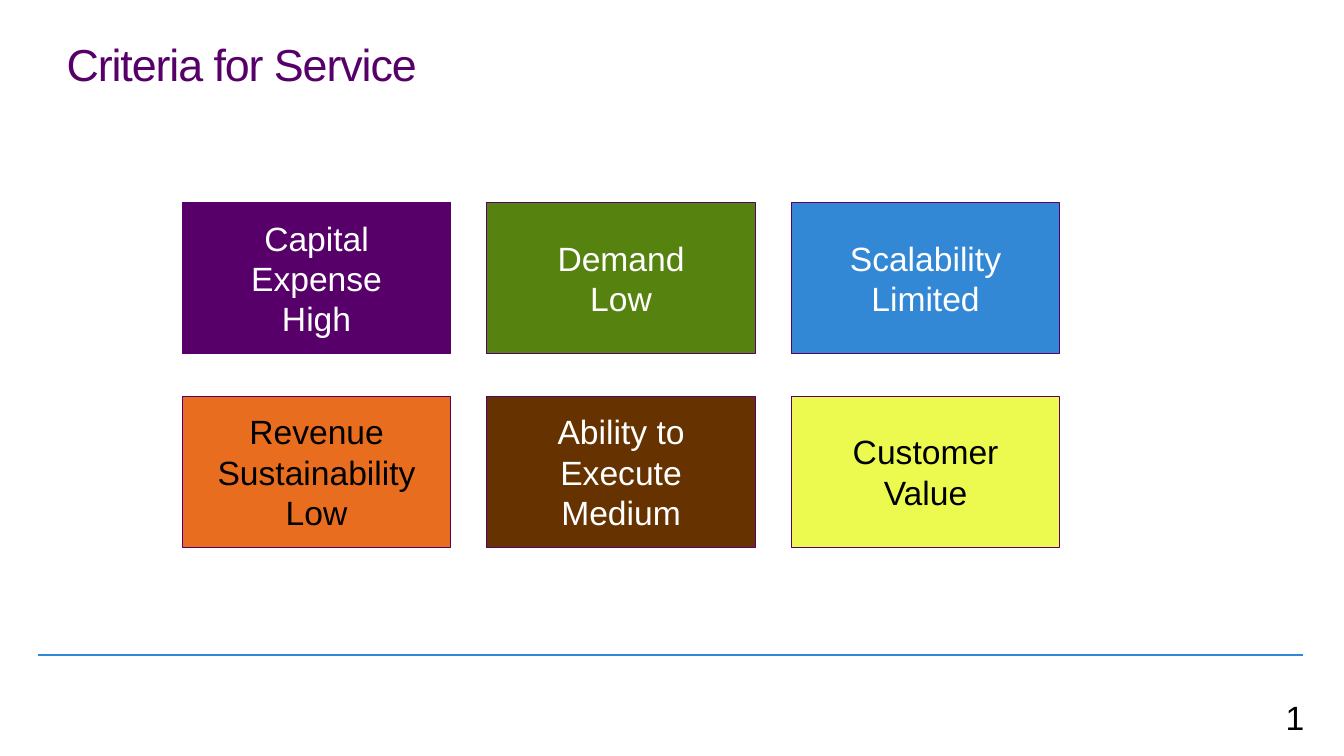
from dataclasses import dataclass

from pptx import Presentation
from pptx.dml.color import RGBColor
from pptx.enum.shapes import MSO_CONNECTOR, MSO_SHAPE
from pptx.enum.text import MSO_ANCHOR, PP_ALIGN
from pptx.oxml.ns import qn
from pptx.oxml.xmlchemy import OxmlElement
from pptx.util import Inches, Pt

COLORS = {
    "purple": "580069",
    "green": "56830F",
    "blue": "3388D5",
    "orange": "E86D1F",
    "brown": "663300",
    "yellow": "ECFA50",
    "white": "FFFFFF",
    "black": "000000",
}
BOX_FRAME = {
    "margin_left": Inches(0.2),
    "margin_right": Inches(0.2),
    "margin_top": Inches(0.16),
    "margin_bottom": Inches(0.16),
    "word_wrap": True,
}
TITLE_FRAME = {
    "margin_left": Inches(0.1),
    "margin_right": Inches(0.1),
    "margin_top": Inches(0.05),
    "margin_bottom": Inches(0.05),
    "word_wrap": True,
    "vertical_anchor": MSO_ANCHOR.TOP,
}
BODY_FONT = {"name": "Arial", "size": Pt(24)}
TITLE_FONT = {"name": "Arial", "size": Pt(32)}

# Criteria grid: first box, box size and column and row pitch
GRID_LEFT, GRID_TOP = 1.81, 2.01
BOX_WIDTH, BOX_HEIGHT = 2.66, 1.5
COLUMN_PITCH, ROW_PITCH = 3.02, 1.92
COLUMNS = 3


@dataclass
class Criterion:
    lines: list[str]
    fill: str
    text: str = "white"


CRITERIA = [
    Criterion(["Capital Expense", "High"], "purple"),
    Criterion(["Demand", "Low"], "green"),
    Criterion(["Scalability", "Limited"], "blue"),
    Criterion(["Revenue Sustainability", "Low"], "orange", "black"),
    Criterion(["Ability to Execute", "Medium"], "brown"),
    Criterion(["Customer Value"], "yellow", "black"),
]


def color(name: str) -> RGBColor:
    return RGBColor.from_string(COLORS[name])


def apply_format(target, values: dict) -> None:
    for name, value in values.items():
        setattr(target, name, value)


def write_text(shape, lines: list[str], frame: dict, font: dict, color_name: str,
               paragraph_format: dict, spacing: int = 0) -> None:
    """Fill a shape with paragraphs; spacing is in hundredths of a point."""
    text_frame = shape.text_frame
    apply_format(text_frame, frame)
    for index, line in enumerate(lines):
        paragraph = text_frame.paragraphs[0] if index == 0 else text_frame.add_paragraph()
        apply_format(paragraph, paragraph_format)
        run = paragraph.add_run()
        run.text = line
        apply_format(run.font, font)
        run.font.color.rgb = color(color_name)
    if spacing:
        for properties in shape.element.iter(qn("a:rPr")):
            properties.set("spc", str(spacing))


def add_title(slide, text: str) -> None:
    title = slide.shapes.title
    apply_format(title, {"left": Inches(0.56), "top": Inches(0.37),
                         "width": Inches(8.26), "height": Inches(0.98)})
    write_text(title, [text], TITLE_FRAME, TITLE_FONT, "purple",
               {"alignment": PP_ALIGN.LEFT, "line_spacing": 0.9}, -80)


def add_footer_line(slide) -> None:
    line = slide.shapes.add_connector(
        MSO_CONNECTOR.STRAIGHT, Inches(0.38), Inches(6.5), Inches(12.92), Inches(6.5))
    line.line.color.rgb = color("blue")
    line.line.width = Pt(1.5)
    line.element.spPr.append(OxmlElement("a:effectLst"))


def add_criterion(slide, criterion: Criterion, index: int) -> None:
    row, column = divmod(index, COLUMNS)
    box = slide.shapes.add_shape(
        MSO_SHAPE.RECTANGLE,
        Inches(GRID_LEFT + column * COLUMN_PITCH), Inches(GRID_TOP + row * ROW_PITCH),
        Inches(BOX_WIDTH), Inches(BOX_HEIGHT))
    box.shadow.inherit = False
    box.fill.solid()
    box.fill.fore_color.rgb = color(criterion.fill)
    box.line.color.rgb = color("purple")
    box.line.width = Pt(0.75)
    write_text(box, criterion.lines, {**BOX_FRAME, "vertical_anchor": MSO_ANCHOR.MIDDLE},
               BODY_FONT, criterion.text, {"alignment": PP_ALIGN.CENTER})


def add_slide_number(slide, number: str) -> None:
    box = slide.shapes.add_textbox(Inches(12.55), Inches(6.75), Inches(0.69), Inches(0.59))
    write_text(box, [number], BOX_FRAME, BODY_FONT, "black", {"space_after": Pt(6)}, -70)


def main() -> None:
    presentation = Presentation()
    presentation.slide_width = Inches(13.33)
    presentation.slide_height = Inches(7.5)
    # "Title Only" layout
    slide = presentation.slides.add_slide(presentation.slide_layouts[5])

    add_footer_line(slide)
    add_title(slide, "Criteria for Service")
    for index, criterion in enumerate(CRITERIA):
        add_criterion(slide, criterion, index)
    add_slide_number(slide, "1")

    presentation.save("out.pptx")


if __name__ == "__main__":
    main()
